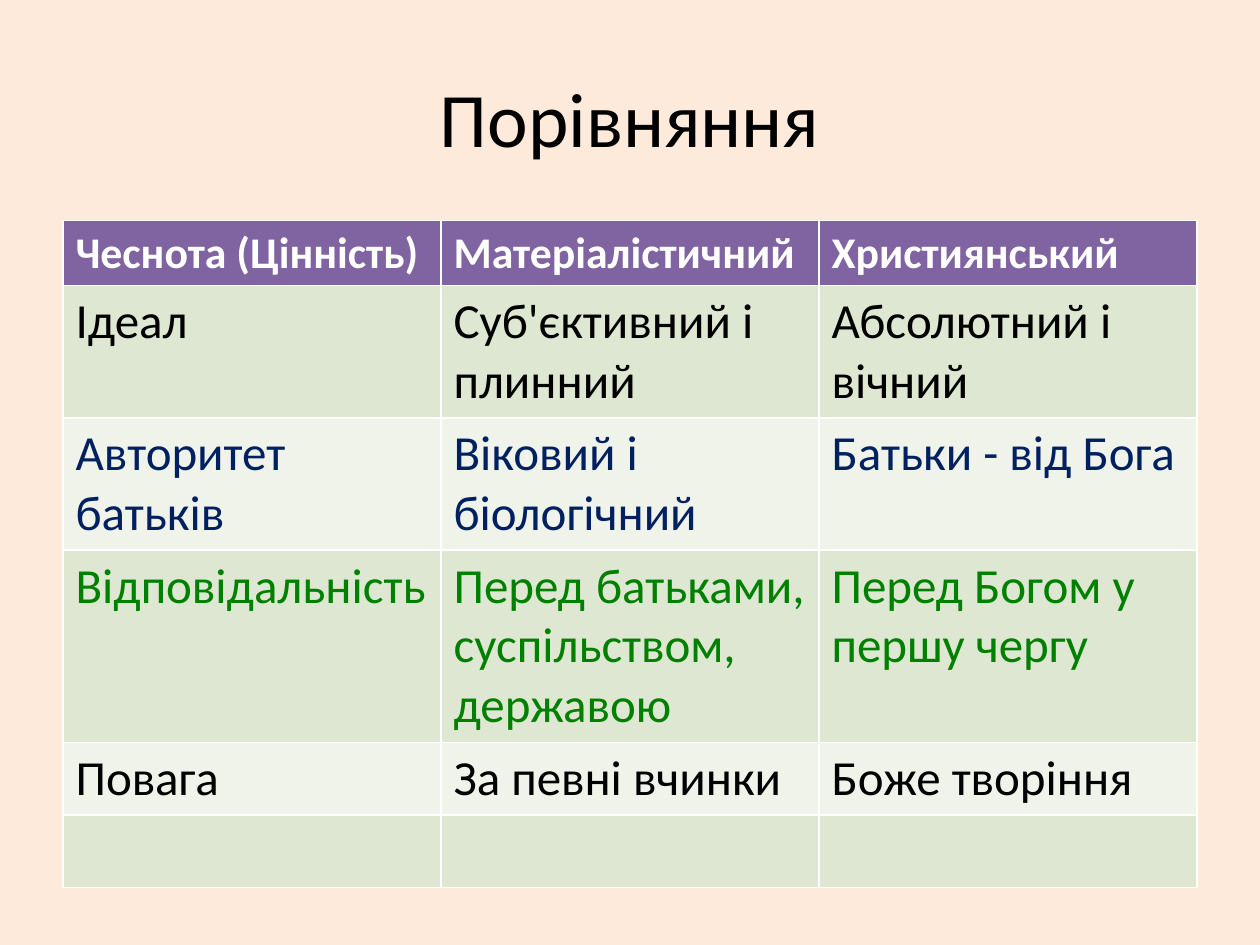
from pptx import Presentation
from pptx.dml.color import RGBColor
from pptx.enum.text import MSO_ANCHOR, PP_ALIGN
from pptx.util import Pt

MIDDLE = MSO_ANCHOR.MIDDLE
CENTER = PP_ALIGN.CENTER
LEFT = PP_ALIGN.LEFT

FONT = "Calibri"
COLORS = {
    "background": "FDEADA",
    "header": "8064A2",
    "dark_band": "DEE7D1",
    "light_band": "EFF3EA",
    "white": "FFFFFF",
    "black": "000000",
    "navy": "002060",
    "green": "008000",
}

HEADINGS = ("Чеснота (Цінність)", "Матеріалістичний", "Християнський")
ROWS = [
    (75.6, "black", ("Ідеал", "Суб'єктивний і плинний", "Абсолютний і вічний")),
    (75.6, "navy", ("Авторитет батьків", "Віковий і біологічний", "Батьки - від Бога")),
    (110, "green", ("Відповідальність", "Перед батьками, суспільством, державою",
                    "Перед Богом у першу чергу")),
    (41.4, "black", ("Повага", "За певні вчинки", "Боже творіння")),
    (41.4, "black", ("", "", "")),
]


def set_fill(fill, color):
    fill.solid()
    fill.fore_color.rgb = RGBColor.from_string(COLORS[color])


def write_text(frame, text, size=28, color="black", bold=False, align=LEFT):
    para = frame.paragraphs[0]
    para.alignment = align
    span = para.add_run()
    span.text = text
    span.font.name = FONT
    span.font.size = Pt(size)
    span.font.bold = bold
    span.font.color.rgb = RGBColor.from_string(COLORS[color])


def add_title(page, text):
    box = page.shapes.add_textbox(Pt(36), Pt(21.6), Pt(648), Pt(90))
    box.text_frame.word_wrap = True
    box.text_frame.vertical_anchor = MIDDLE
    write_text(box.text_frame, text, size=44, align=CENTER)


def fill_row(row, height, texts, band, **text_format):
    row.height = Pt(height)
    for cell, text in zip(row.cells, texts):
        set_fill(cell.fill, band)
        if text:
            write_text(cell.text_frame, text, **text_format)


def add_comparison(page):
    heights = [37.2] + [height for height, _, _ in ROWS]
    table = page.shapes.add_table(
        len(heights), len(HEADINGS), Pt(36), Pt(126), Pt(648), Pt(sum(heights))
    ).table
    fill_row(table.rows[0], heights[0], HEADINGS, "header",
             size=25, color="white", bold=True)
    for index, (height, color, texts) in enumerate(ROWS, start=1):
        band = "dark_band" if index % 2 else "light_band"
        fill_row(table.rows[index], height, texts, band, color=color)


def main():
    deck = Presentation()
    deck.slide_width, deck.slide_height = Pt(720), Pt(540)
    page = deck.slides.add_slide(deck.slide_layouts[6])
    set_fill(page.background.fill, "background")
    add_title(page, "Порівняння")
    add_comparison(page)
    deck.save("out.pptx")


if __name__ == "__main__":
    main()
